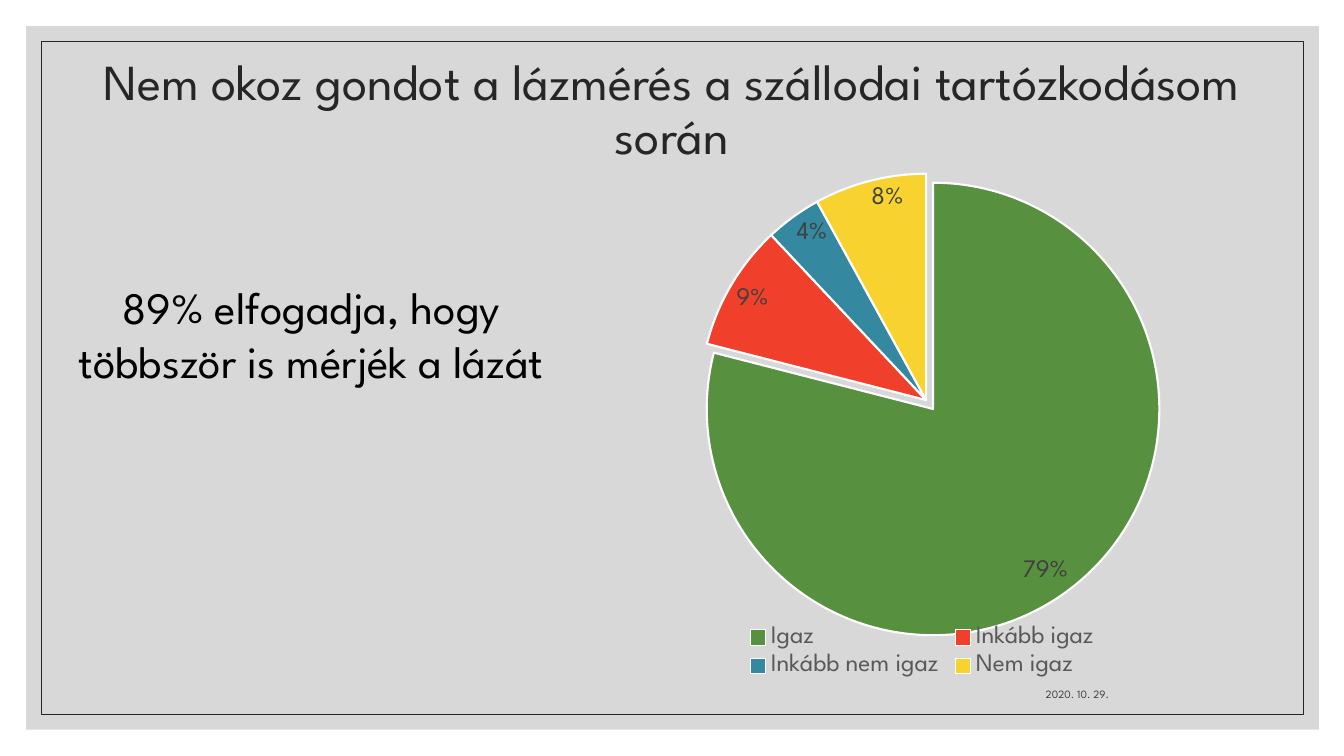
from lxml import etree
from pptx import Presentation
from pptx.chart.data import CategoryChartData
from pptx.dml.color import RGBColor
from pptx.enum.chart import XL_CHART_TYPE, XL_LABEL_POSITION, XL_LEGEND_POSITION
from pptx.enum.shapes import MSO_SHAPE
from pptx.enum.text import MSO_ANCHOR, PP_ALIGN
from pptx.oxml import parse_xml
from pptx.oxml.ns import nsdecls, qn
from pptx.util import Inches, Pt

FONT = "League Spartan"


def rgb(value):
    return RGBColor.from_string(value)


def set_font(font, size, color):
    font.name, font.size = FONT, Pt(size)
    font.color.rgb = rgb(color)


prs = Presentation()
prs.slide_width, prs.slide_height = Inches(13.33), Inches(7.5)
s = prs.slides.add_slide(prs.slide_layouts[6])

# Grey panel and thin frame
panel, frame = [
    s.shapes.add_shape(MSO_SHAPE.RECTANGLE, *map(Inches, box))
    for box in ((0.26, 0.26, 12.82, 6.98), (0.41, 0.41, 12.52, 6.68))
]
panel.shadow.inherit = frame.shadow.inherit = False
panel.fill.solid()
panel.fill.fore_color.rgb = rgb("BFBFBF")
color = panel.fill._xPr.find(qn("a:solidFill"))[0]
etree.SubElement(color, qn("a:alpha")).set("val", "60000")
panel.line.fill.background()
frame.fill.background()
frame.line.color.rgb = rgb("262626")
frame.line.width = Pt(0.5)

# Pie chart
answers = {
    "Igaz": (0.79, "57903F"),
    "Inkább igaz": (0.09, "F03F2B"),
    "Inkább nem igaz": (0.04, "3488A0"),
    "Nem igaz": (0.08, "F8D22F"),
}
data = CategoryChartData(number_format="0%")
data.categories = list(answers)
data.add_series("Series 1", [value for value, _ in answers.values()])
chart = s.shapes.add_chart(
    XL_CHART_TYPE.PIE, Inches(5.41), Inches(1.71), Inches(7.47), Inches(5.06), data
).chart
chart.has_title = False
set_font(chart.font, 10, "000000")
chart.has_legend = True
chart.legend.position = XL_LEGEND_POSITION.BOTTOM
chart.legend.include_in_layout = False
set_font(chart.legend.font, 18, "595959")

plot = chart.plots[0]
plot.vary_by_categories = True
series = plot.series[0]
for i, (_, fill) in enumerate(answers.values()):
    fmt = series.points[i].format
    fmt.fill.solid()
    fmt.fill.fore_color.rgb = rgb(fill)
    fmt.line.color.rgb = rgb("FFFFFF")
    fmt.line.width = Pt(1.5)

labels = series.data_labels
labels.show_value = True
labels.show_percentage = False
labels.number_format = "0%"
labels.number_format_is_linked = False
labels.position = XL_LABEL_POSITION.INSIDE_END
set_font(labels.font, 18, "404040")

# Pull out the largest slice
first = series._element.find(qn("c:dPt"))
first.find(qn("c:spPr")).addprevious(
    parse_xml(f'<c:explosion {nsdecls("c")} val="5"/>')
)

# Fixed plot position inside the chart
area = chart._chartSpace.find(qn("c:chart")).find(qn("c:plotArea"))
for old in area.findall(qn("c:layout")):
    area.remove(old)
area.insert(0, parse_xml(
    f'<c:layout {nsdecls("c")}><c:manualLayout><c:layoutTarget val="inner"/>'
    '<c:xMode val="edge"/><c:yMode val="edge"/><c:x val="0.205"/><c:y val="0.002"/>'
    '<c:w val="0.601"/><c:h val="0.889"/></c:manualLayout></c:layout>'
))

# Title, date and key finding
texts = [
    ("Nem okoz gondot a lázmérés a szállodai tartózkodásom során",
     (0.45, 0.5, 12.43, 1.21), 36, "262626", MSO_ANCHOR.MIDDLE, PP_ALIGN.CENTER, 0.9),
    ("2020. 10. 29.",
     (7.94, 6.6, 3.16, 0.4), 8, "404040", MSO_ANCHOR.BOTTOM, PP_ALIGN.RIGHT, 1.0),
    ("89% elfogadja, hogy többször is mérjék a lázát",
     (0.61, 2.73, 4.96, 1.72), 32, "000000", MSO_ANCHOR.TOP, PP_ALIGN.CENTER, 1.0),
]
for text, box, size, color, anchor, align, spacing in texts:
    tf = s.shapes.add_textbox(*map(Inches, box)).text_frame
    tf.word_wrap = True
    tf.vertical_anchor = anchor
    p = tf.paragraphs[0]
    p.text = text
    p.alignment = align
    p.line_spacing = spacing
    set_font(p.runs[0].font, size, color)

prs.save("out.pptx")
